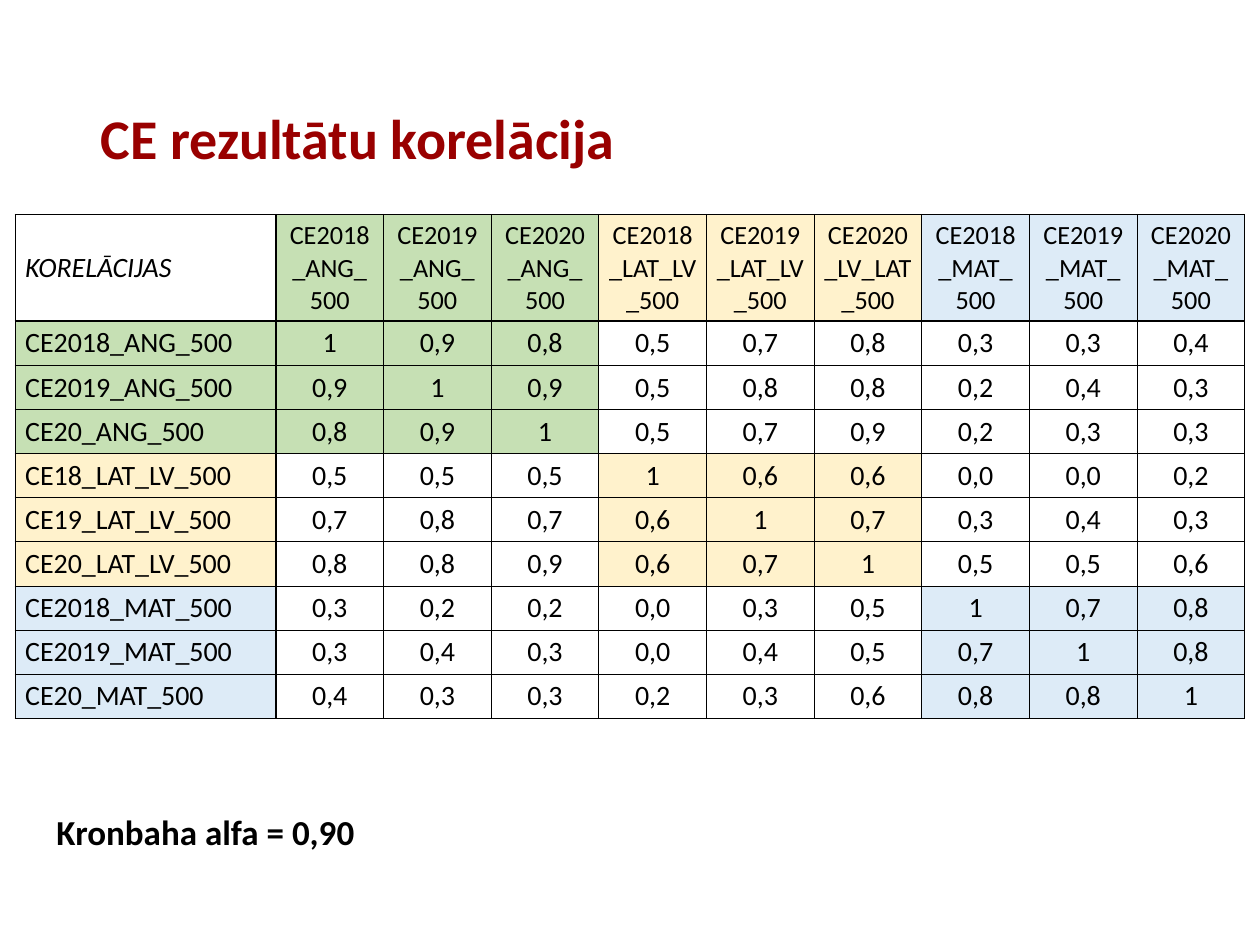
from lxml import etree
from pptx import Presentation
from pptx import util as u
from pptx.dml.color import RGBColor
from pptx.enum import text
from pptx.oxml import ns

RED = RGBColor(0x99, 0x00, 0x00)
BLACK = RGBColor(0x00, 0x00, 0x00)
GREEN = RGBColor(0xC6, 0xE0, 0xB4)
CREAM = RGBColor(0xFF, 0xF2, 0xCC)
BLUE = RGBColor(0xDD, 0xEB, 0xF7)
TINTS = [GREEN, CREAM, BLUE]

HEADS = [
    "CE2018_ANG_500", "CE2019_ANG_500", "CE2020_ANG_500",
    "CE2018_LAT_LV_500", "CE2019_LAT_LV_500", "CE2020_LV_LAT_500",
    "CE2018_MAT_500", "CE2019_MAT_500", "CE2020_MAT_500",
]
ROWS = [
    ("CE2018_ANG_500", "1 0,9 0,8 0,5 0,7 0,8 0,3 0,3 0,4"),
    ("CE2019_ANG_500", "0,9 1 0,9 0,5 0,8 0,8 0,2 0,4 0,3"),
    ("CE20_ANG_500", "0,8 0,9 1 0,5 0,7 0,9 0,2 0,3 0,3"),
    ("CE18_LAT_LV_500", "0,5 0,5 0,5 1 0,6 0,6 0,0 0,0 0,2"),
    ("CE19_LAT_LV_500", "0,7 0,8 0,7 0,6 1 0,7 0,3 0,4 0,3"),
    ("CE20_LAT_LV_500", "0,8 0,8 0,9 0,6 0,7 1 0,5 0,5 0,6"),
    ("CE2018_MAT_500", "0,3 0,2 0,2 0,0 0,3 0,5 1 0,7 0,8"),
    ("CE2019_MAT_500", "0,3 0,4 0,3 0,0 0,4 0,5 0,7 1 0,8"),
    ("CE20_MAT_500", "0,4 0,3 0,3 0,2 0,3 0,6 0,8 0,8 1"),
]


class Deck:
    face = "Calibri"
    thin, thick = 0.5, 1.5

    def __init__(self, wide, high):
        self.prs = Presentation()
        self.prs.slide_width = u.Inches(wide)
        self.prs.slide_height = u.Inches(high)
        self.slide = self.prs.slides.add_slide(self.prs.slide_layouts[6])

    def font(self, para, size, color=BLACK, bold=False, italic=False):
        font = para.font
        font.name, font.size = self.face, u.Pt(size)
        font.bold, font.italic = bold, italic
        font.color.rgb = color

    def label(self, words, box, size, color=BLACK, wrap=True):
        wide, high = self.prs.slide_width, self.prs.slide_height
        area = [int(part * full) for part, full in zip(box, (wide, high) * 2)]
        frame = self.slide.shapes.add_textbox(*area).text_frame
        frame.word_wrap = wrap
        frame.vertical_anchor = text.MSO_ANCHOR.MIDDLE
        para = frame.paragraphs[0]
        para.text = words
        self.font(para, size, color, bold=True)

    def edge(self, cell, side, width):
        props = cell._tc.get_or_add_tcPr()
        line = etree.SubElement(props, ns.qn("a:ln" + side), w=str(u.Pt(width)))
        fill = etree.SubElement(line, ns.qn("a:solidFill"))
        etree.SubElement(fill, ns.qn("a:srgbClr"), val=str(BLACK))

    def cell(self, grid, row, col, words):
        cell = grid.cell(row, col)
        cell.margin_left = cell.margin_right = u.Inches(0.08)
        cell.margin_top = cell.margin_bottom = u.Inches(0.04)
        head = row == 0 and col > 0
        if head:
            cell.vertical_anchor = text.MSO_ANCHOR.BOTTOM
        elif row and not col:
            cell.vertical_anchor = text.MSO_ANCHOR.TOP
        else:
            cell.vertical_anchor = text.MSO_ANCHOR.MIDDLE
        para = cell.text_frame.paragraphs[0]
        para.text = words
        if col:
            para.alignment = text.PP_ALIGN.CENTER
        self.font(para, 15 if head else 16, italic=row == col == 0)
        heavy = {"L": col == 1, "R": col == 0, "T": row == 1, "B": row == 0}
        for side, bold in heavy.items():
            self.edge(cell, side, self.thick if bold else self.thin)
        down, over = (row - 1) // 3, (col - 1) // 3
        cell.fill.background()
        if row + col and (not row or not col or down == over):
            cell.fill.solid()
            cell.fill.fore_color.rgb = TINTS[max(down, over)]

    def table(self, data, box, first, top):
        left, up, wide, high = box
        rows, cols = len(data), len(data[0])
        grid = self.slide.shapes.add_table(
            rows, cols, *(u.Inches(part) for part in box)).table
        grid.first_row = grid.horz_banding = False
        for num, col in enumerate(grid.columns):
            col.width = u.Inches((wide - first) / (cols - 1) if num else first)
        for num, row in enumerate(grid.rows):
            row.height = u.Inches((high - top) / (rows - 1) if num else top)
        for row, line in enumerate(data):
            for col, words in enumerate(line):
                self.cell(grid, row, col, words)


def main():
    deck = Deck(10, 7.5)
    deck.label("CE rezultātu korelācija", (0.07, 0.05, 0.86, 0.19), 32, RED)
    data = [["KORELĀCIJAS", *HEADS]]
    data += [[name, *nums.split()] for name, nums in ROWS]
    deck.table(data, (0.12, 1.7, 9.76, 4), 2.07, 0.85)
    deck.label("Kronbaha alfa = 0,90", (0.035, 0.85, 0.29, 0.06), 20, wrap=False)
    deck.prs.save("out.pptx")


if __name__ == "__main__":
    main()
